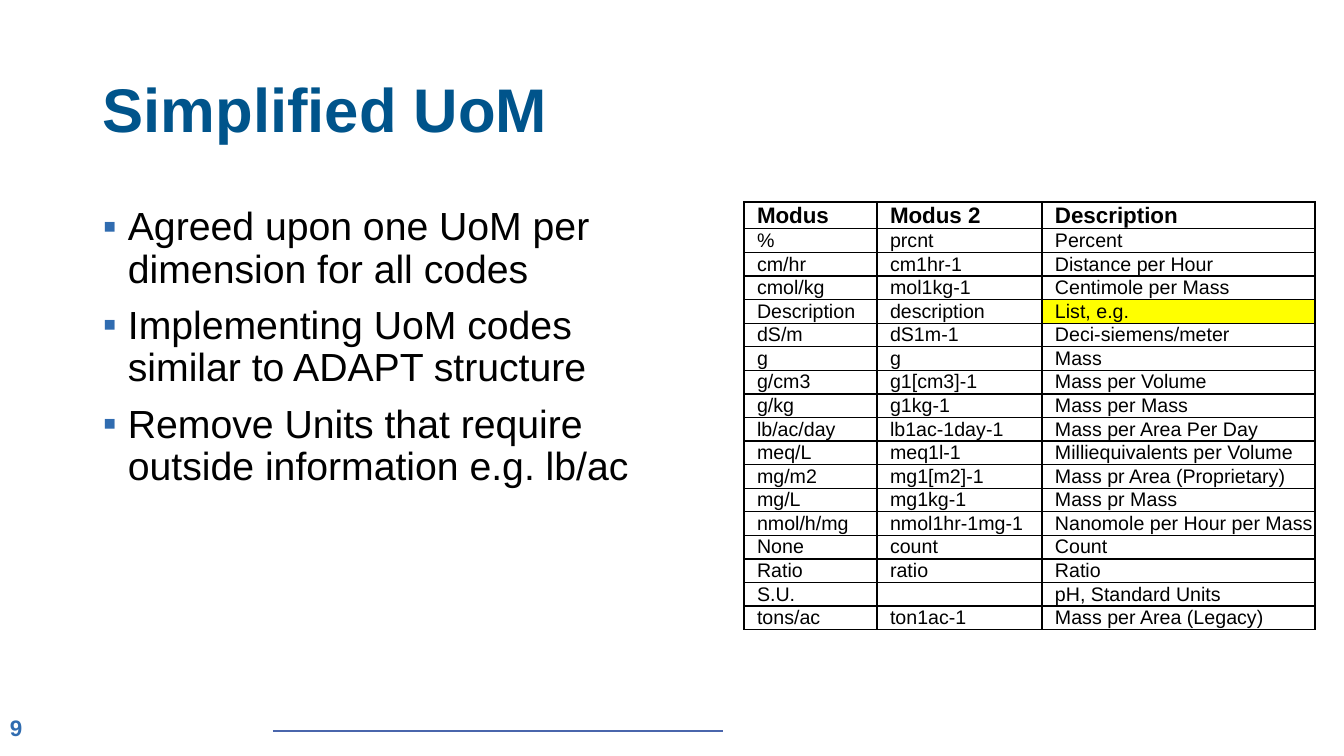
from lxml import etree
from pptx import Presentation
from pptx import util as u
from pptx.dml.color import RGBColor
from pptx.enum import shapes, text
from pptx.oxml import ns

PX = 914400 / 100.8
FONT = "Arial"
TITLE_BLUE = RGBColor(0x00, 0x54, 0x8B)
ACCENT_BLUE = RGBColor(0x30, 0x6C, 0xB0)
LINE_BLUE = RGBColor(0x4A, 0x66, 0xAC)
BLACK = RGBColor(0, 0, 0)
WHITE = RGBColor(0xFF, 0xFF, 0xFF)
YELLOW = RGBColor(0xFF, 0xFF, 0x00)

BULLETS = [
    "Agreed upon one UoM per dimension for all codes",
    "Implementing UoM codes similar to ADAPT structure",
    "Remove Units that require outside information e.g. lb/ac",
]
UNITS = [
    ("Modus", "Modus 2", "Description"),
    ("%", "prcnt", "Percent"),
    ("cm/hr", "cm1hr-1", "Distance per Hour"),
    ("cmol/kg", "mol1kg-1", "Centimole per Mass"),
    ("Description", "description", "List, e.g."),
    ("dS/m", "dS1m-1", "Deci-siemens/meter"),
    ("g", "g", "Mass"),
    ("g/cm3", "g1[cm3]-1", "Mass per Volume"),
    ("g/kg", "g1kg-1", "Mass per Mass"),
    ("lb/ac/day", "lb1ac-1day-1", "Mass per Area Per Day"),
    ("meq/L", "meq1l-1", "Milliequivalents per Volume"),
    ("mg/m2", "mg1[m2]-1", "Mass pr Area (Proprietary)"),
    ("mg/L", "mg1kg-1", "Mass pr Mass"),
    ("nmol/h/mg", "nmol1hr-1mg-1", "Nanomole per Hour per Mass"),
    ("None", "count", "Count"),
    ("Ratio", "ratio", "Ratio"),
    ("S.U.", "", "pH, Standard Units"),
    ("tons/ac", "ton1ac-1", "Mass per Area (Legacy)"),
]
COLUMN_WIDTHS = (133, 165, 273)
HEADER_HEIGHT, ROW_HEIGHT = 25, 23
HIGHLIGHTED = (4, 2)
BOTTOM_ANCHORED = {(9, 0), (11, 0), (11, 1), (11, 2)}


def px(n):
    return u.Emu(round(n * PX))


def sub(parent, tag, **attrs):
    return etree.SubElement(parent, ns.qn(tag), {k: str(v) for k, v in attrs.items()})


def style(p, size, color, bold=False):
    for r in p.runs:
        r.font.name = FONT
        r.font.size = u.Pt(size)
        r.font.bold = bold
        r.font.color.rgb = color


def add_textbox(s, box, anchor=text.MSO_ANCHOR.TOP):
    tf = s.shapes.add_textbox(*map(px, box)).text_frame
    tf.word_wrap = True
    tf.vertical_anchor = anchor
    return tf


def add_title(s, box):
    p = add_textbox(s, box, text.MSO_ANCHOR.MIDDLE).paragraphs[0]
    p.text = "Simplified UoM"
    p.line_spacing = 0.9
    style(p, 44, TITLE_BLUE, True)


def add_bullets(s, box):
    tf = add_textbox(s, box)
    tf.text = "\n".join(BULLETS)
    for i, p in enumerate(tf.paragraphs):
        p.line_spacing = 0.9
        p.space_before = u.Pt(10 if i else 0)
        pPr = p._p.get_or_add_pPr()
        pPr.set("marL", str(px(25)))
        pPr.set("indent", str(px(-25)))
        sub(sub(pPr, "a:buClr"), "a:srgbClr", val=ACCENT_BLUE)
        sub(pPr, "a:buFont", typeface=FONT)
        sub(pPr, "a:buChar", char="▪")
        style(p, 28, BLACK)


def add_footer(s, box):
    left, top, width, height = box
    p = add_textbox(s, (left, top, 55, height)).paragraphs[0]
    p.text = "9"
    style(p, 16, ACCENT_BLUE, True)
    y = px(top + 22)
    rule = s.shapes.add_connector(
        shapes.MSO_CONNECTOR.STRAIGHT, px(left + 273), y, px(left + width), y)
    rule.line.color.rgb = LINE_BLUE
    rule.line.width = u.Pt(1)
    sub(rule._element.spPr, "a:effectLst")


def add_borders(cell):
    tcPr = cell._tc.get_or_add_tcPr()
    for side in ("a:lnL", "a:lnR", "a:lnT", "a:lnB"):
        ln = sub(tcPr, side, w=u.Pt(1))
        sub(sub(ln, "a:solidFill"), "a:srgbClr", val=BLACK)


def fill_cell(cell, value, size, bold, anchor, color):
    cell.margin_left = cell.margin_right = cell.margin_top = cell.margin_bottom = 0
    cell.vertical_anchor = anchor
    add_borders(cell)
    cell.fill.solid()
    cell.fill.fore_color.rgb = color
    p = cell.text_frame.paragraphs[0]
    p.text = value
    p._p.get_or_add_pPr().set("marL", str(px(13)))
    style(p, size, BLACK, bold)
    if not value:
        sub(p._p, "a:endParaRPr", sz=size * 100)


def add_unit_table(s, box):
    table = s.shapes.add_table(len(UNITS), len(COLUMN_WIDTHS), *map(px, box)).table
    table.first_row = table.horz_banding = False
    for column, width in zip(table.columns, COLUMN_WIDTHS):
        column.width = px(width)
    for i, values in enumerate(UNITS):
        header = i == 0
        table.rows[i].height = px(HEADER_HEIGHT if header else ROW_HEIGHT)
        for j, value in enumerate(values):
            bottom = (i, j) in BOTTOM_ANCHORED
            fill_cell(
                table.cell(i, j), value, 16 if header else 14, header,
                text.MSO_ANCHOR.BOTTOM if bottom else text.MSO_ANCHOR.MIDDLE,
                YELLOW if (i, j) == HIGHLIGHTED else WHITE)


def main():
    prs = Presentation()
    prs.slide_width, prs.slide_height = px(1344), px(756)
    s = prs.slides.add_slide(prs.slide_layouts[6])
    add_footer(s, (0, 709, 723, 35))
    add_title(s, (93, 40, 1159, 146))
    add_bullets(s, (93, 202, 572, 480))
    table_height = HEADER_HEIGHT + ROW_HEIGHT * (len(UNITS) - 1)
    add_unit_table(s, (744, 202, sum(COLUMN_WIDTHS), table_height))
    prs.save("out.pptx")


if __name__ == "__main__":
    main()
